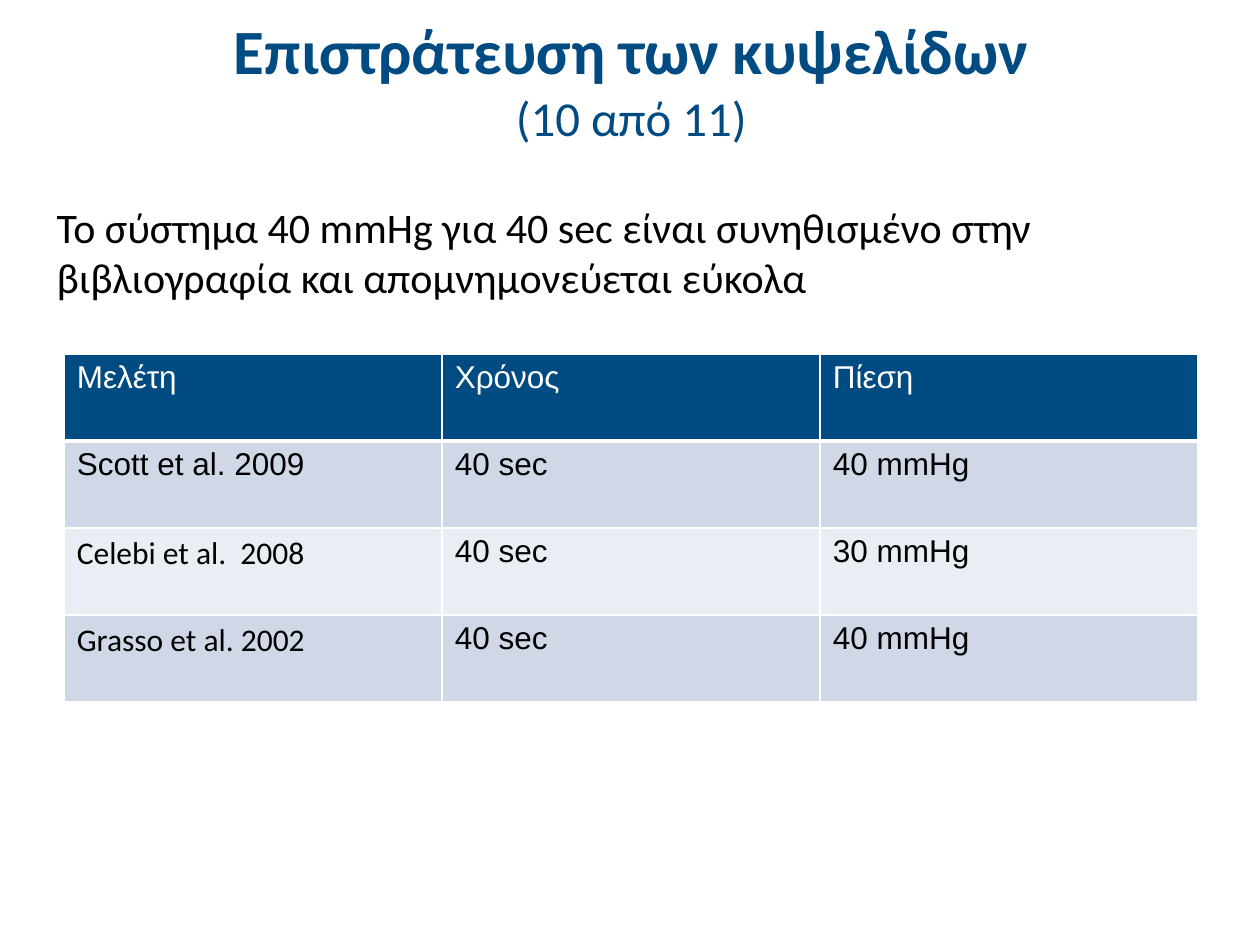
from lxml import etree
from pptx import Presentation
from pptx.dml.color import RGBColor
from pptx.enum.text import MSO_ANCHOR, PP_ALIGN
from pptx.oxml.ns import qn
from pptx.util import Inches, Pt

MIDDLE, TOP = MSO_ANCHOR.MIDDLE, MSO_ANCHOR.TOP
CENTER, LEFT = PP_ALIGN.CENTER, PP_ALIGN.LEFT

NAVY = RGBColor(0x00, 0x4B, 0x82)
BLACK = RGBColor(0x00, 0x00, 0x00)
WHITE = RGBColor(0xFF, 0xFF, 0xFF)
BANDS = RGBColor(0xE9, 0xED, 0xF4), RGBColor(0xD0, 0xD8, 0xE8)

STUDIES = [
    ("Μελέτη", "Χρόνος", "Πίεση"),
    ("Scott et al. 2009", "40 sec", "40 mmHg"),
    ("Celebi et al.  2008", "40 sec", "30 mmHg"),
    ("Grasso et al. 2002", "40 sec", "40 mmHg"),
]
CALIBRI_CELLS = {(2, 0), (3, 0)}


def add_span(para, text, *, size, font="Calibri", color=BLACK, bold=False):
    span = para.add_run()
    span.text = text
    span.font.size = Pt(size)
    span.font.name = font
    span.font.bold = bold
    span.font.color.rgb = color


class SlideBuilder:
    accent = NAVY
    border = WHITE
    cell_size = 18

    def __init__(self, page):
        self.page = page

    def text(self, left, top, width, height, lines, align=LEFT, anchor=TOP):
        box = self.page.shapes.add_textbox(
            Inches(left), Inches(top), Inches(width), Inches(height))
        frame = box.text_frame
        frame.word_wrap = True
        frame.vertical_anchor = anchor
        para = frame.paragraphs[0]
        para.alignment = align
        for index, (text, style) in enumerate(lines):
            if index:
                para.add_line_break()
            add_span(para, text, **style)

    def borders(self, cell, header):
        properties = cell._tc.get_or_add_tcPr()
        for side in "LRTB":
            points = 3 if header and side == "B" else 1
            line = etree.SubElement(
                properties, qn(f"a:ln{side}"), w=str(Pt(points)))
            fill = etree.SubElement(line, qn("a:solidFill"))
            etree.SubElement(fill, qn("a:srgbClr"), val=str(self.border))

    def table(self, left, top, width, height, rows):
        table = self.page.shapes.add_table(
            len(rows), len(rows[0]), Inches(left), Inches(top),
            Inches(width), Inches(height)).table
        for row, values in enumerate(rows):
            header = row == 0
            for column, value in enumerate(values):
                cell = table.cell(row, column)
                self.borders(cell, header)
                cell.fill.solid()
                cell.fill.fore_color.rgb = self.accent if header else BANDS[row % 2]
                add_span(
                    cell.text_frame.paragraphs[0], value, size=self.cell_size,
                    font="Calibri" if (row, column) in CALIBRI_CELLS else "Arial",
                    color=WHITE if header else BLACK)


def main():
    deck = Presentation()
    deck.slide_width, deck.slide_height = Inches(10), Inches(7.5)
    builder = SlideBuilder(deck.slides.add_slide(deck.slide_layouts[6]))
    builder.text(0.51, 0.13, 9, 0.99, [
        ("Επιστράτευση των κυψελίδων", dict(size=36, color=NAVY, bold=True)),
        ("(10 από 11)", dict(size=27.9, color=NAVY)),
    ], align=CENTER, anchor=MIDDLE)
    builder.table(0.51, 2.81, 9, 2.76, STUDIES)
    builder.text(0.35, 1.55, 8.98, 0.91, [
        ("Το σύστημα 40 mmHg για 40 sec είναι συνηθισμένο στην "
         "βιβλιογραφία και απομνημονεύεται εύκολα", dict(size=24)),
    ])
    deck.save("out.pptx")


if __name__ == "__main__":
    main()
